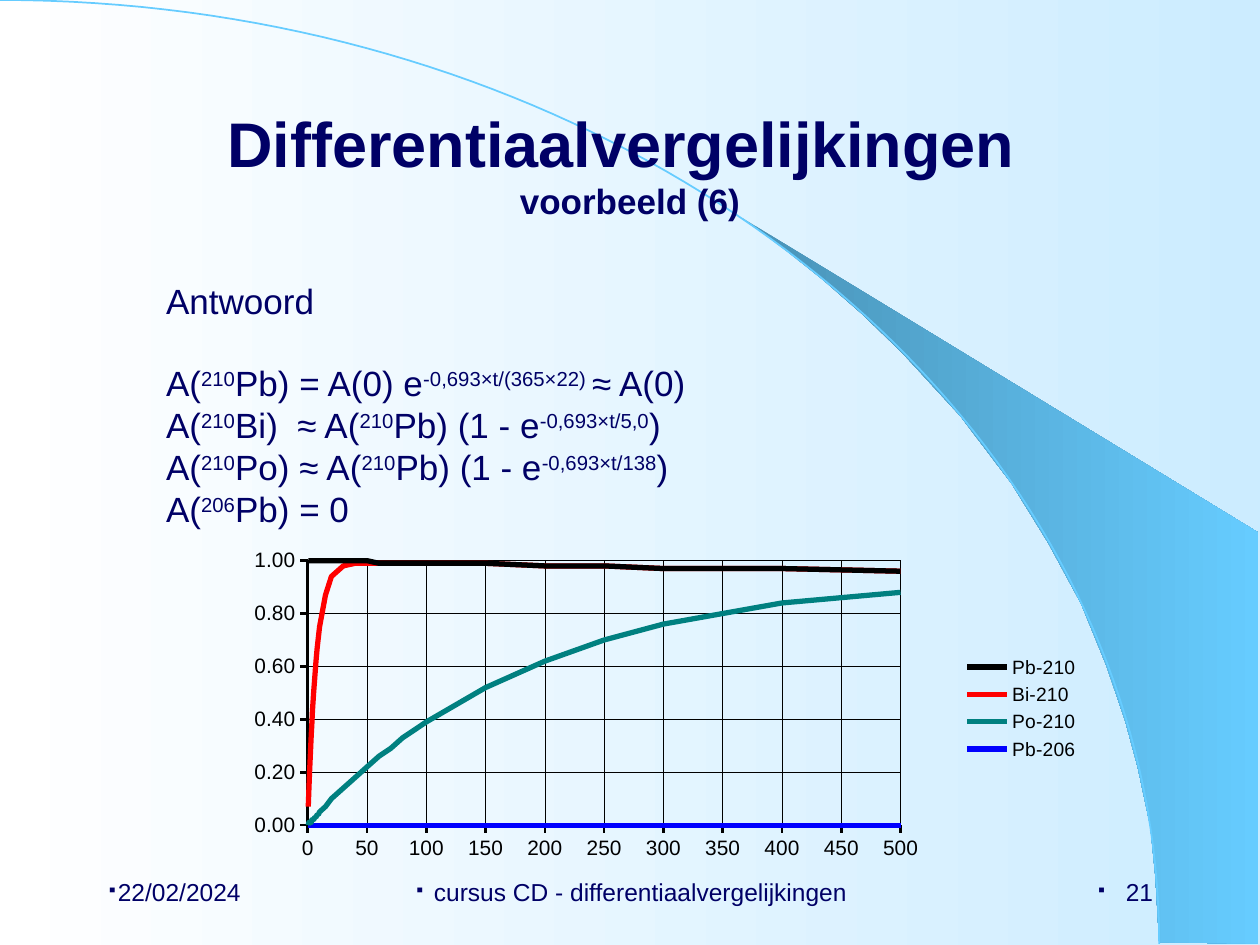
from math import exp

from lxml import etree
from pptx import Presentation
from pptx.chart.data import XyChartData
from pptx.dml.color import RGBColor
from pptx.enum.chart import XL_CHART_TYPE, XL_LEGEND_POSITION, XL_TICK_MARK
from pptx.enum.text import MSO_ANCHOR, PP_ALIGN
from pptx.oxml import parse_xml
from pptx.oxml.ns import nsdecls, qn
from pptx.util import Inches, Pt

SMOOTH = XL_CHART_TYPE.XY_SCATTER_SMOOTH_NO_MARKERS
LEGEND_RIGHT = XL_LEGEND_POSITION.RIGHT
TICK_OUT, TICK_NONE = XL_TICK_MARK.OUTSIDE, XL_TICK_MARK.NONE
MIDDLE = MSO_ANCHOR.MIDDLE
LEFT, CENTER, RIGHT = PP_ALIGN.LEFT, PP_ALIGN.CENTER, PP_ALIGN.RIGHT

FONT, NAVY, SKY, BLACK = "Arial", "000066", "66CCFF", "000000"
WEDGE = [
    (9.2, 7.48), (9.99, 7.49), (9.99, 4.23), (5.89, 1.73), (6.24, 1.99), (6.53, 2.22),
    (6.85, 2.5), (7.16, 2.8), (7.62, 3.3), (8.03, 3.84), (8.32, 4.31), (8.58, 4.79),
    (8.78, 5.28), (8.93, 5.72), (9.03, 6.09), (9.13, 6.56), (9.17, 6.96),
]
FORMULAS = [
    ["A(", "210", "Pb) = A(0) e", "-0,693×t/(365×22) ", "≈ A(0)"],
    ["A(", "210", "Bi)  ≈ A(", "210", "Pb) (1 - e", "-0,693×t/5,0", ")"],
    ["A(", "210", "Po) ≈ A(", "210", "Pb) (1 - e", "-0,693×t/138", ")"],
    ["A(", "206", "Pb) = 0"],
]
DAYS = [
    *(step / 2 for step in range(1, 8)), *range(4, 11), 15,
    *range(20, 101, 10), *range(150, 401, 50), 500,
]


def colour(code):
    """Turn a hex string into a colour."""
    return RGBColor.from_string(code)


def style_font(font, size, code, bold=False):
    """Give a font the deck's typeface with a size and colour."""
    font.name, font.size, font.bold = FONT, Pt(size), bold
    font.color.rgb = colour(code)


def style_line(line, code, width):
    """Set the colour and width of a line."""
    line.color.rgb = colour(code)
    line.width = Pt(width)


def fill_gradient(fill, start, end):
    """Fill with a left-to-right gradient."""
    fill.gradient()
    fill.gradient_angle = 0
    for stop, code in zip(fill.gradient_stops, (start, end)):
        stop.color.rgb = colour(code)


def add_outline(page, points, close):
    """Draw a freeform through points given in inches."""
    corners = [(Inches(x), Inches(y)) for x, y in points]
    builder = page.shapes.build_freeform(*corners[0])
    builder.add_line_segments(corners[1:], close=close)
    shape = builder.convert_to_shape()
    shape.shadow.inherit = False
    return shape


def add_backdrop(page, width, height):
    """Place the gradient, the wedge and the arc that ends at width, height."""
    fill_gradient(page.background.fill, "FFFFFF", "CCECFF")
    wedge = add_outline(page, WEDGE, True)
    fill_gradient(wedge.fill, "4992B6", SKY)
    wedge.line.fill.background()

    arc_points = []
    for step in range(81):
        t = step / 80
        s = 1 - t
        x = 3 * s * s * t * 5.08 + (3 * s * t * t + t ** 3) * width
        y = 3 * s * t * t * 3.35 + t ** 3 * height
        arc_points.append((x, y))
    arc = add_outline(page, arc_points, False)
    arc.fill.background()
    style_line(arc.line, SKY, 1)


def place_title(page, left, top, width, height):
    """Fill the title placeholder and bring it above the backdrop."""
    title = page.shapes.title
    page.shapes._spTree.append(title._element)
    title.left, title.top = Inches(left), Inches(top)
    title.width, title.height = Inches(width), Inches(height)
    frame = title.text_frame
    frame.vertical_anchor = MIDDLE
    para = frame.paragraphs[0]
    para.alignment = CENTER
    heading = para.add_run()
    heading.text = "Differentiaalvergelijkingen "
    para.add_line_break()
    subheading = para.add_run()
    subheading.text = "voorbeeld (6)"
    style_font(heading.font, 36, NAVY, True)
    style_font(subheading.font, 20, NAVY, True)


def add_answer(page, left, top, width, height):
    """Write the answer heading and its formulas with raised exponents."""
    box = page.shapes.add_textbox(Inches(left), Inches(top), Inches(width), Inches(height))
    frame = box.text_frame
    frame.word_wrap = True
    for number, pieces in enumerate([["Antwoord"], *FORMULAS]):
        para = frame.add_paragraph() if number else frame.paragraphs[0]
        style_font(para.font, 20, NAVY)
        para.space_after = Pt(0 if number else 23)
        para._p.get_or_add_pPr().set("marL", str(Inches(0.47)))
        for index, piece in enumerate(pieces):
            span = para.add_run()
            span.text = piece
            if index % 2:
                span.font._element.set("baseline", "30000")


def add_footer(page, text, alignment, left, top, width, height):
    """Write one footer field with a small square bullet."""
    box = page.shapes.add_textbox(Inches(left), Inches(top), Inches(width), Inches(height))
    frame = box.text_frame
    frame.word_wrap = True
    frame.vertical_anchor = MIDDLE
    para = frame.paragraphs[0]
    para.text = text
    para.alignment = alignment
    style_font(para.font, 14, NAVY)
    properties = para._p.get_or_add_pPr()
    bullet = etree.Element(qn("a:buChar"), char="▪")
    size = etree.Element(qn("a:buSzPct"), val="60000")
    properties.insert(0, size)
    properties.insert(1, bullet)


def decay_curves():
    """Return name, colour and activity function of each nuclide."""
    def lead(t):
        return exp(-0.693 * t / (365 * 22))

    return [
        ("Pb-210", BLACK, lead),
        ("Bi-210", "FF0000", lambda t: lead(t) * (1 - exp(-0.693 * t / 5))),
        ("Po-210", "008080", lambda t: lead(t) * (1 - exp(-0.693 * t / 138))),
        ("Pb-206", "0000FF", lambda t: 0),
    ]


def style_axis(axis, maximum, major, number_format):
    """Format one axis with its scale, grid and labels."""
    axis.minimum_scale, axis.maximum_scale, axis.major_unit = 0, maximum, major
    axis.major_tick_mark, axis.minor_tick_mark = TICK_OUT, TICK_NONE
    axis.has_major_gridlines = True
    style_line(axis.major_gridlines.format.line, BLACK, 0.37)
    style_line(axis.format.line, BLACK, 1.5)
    style_font(axis.tick_labels.font, 11.9, BLACK)
    axis.tick_labels.number_format = number_format
    axis.tick_labels.number_format_is_linked = False


def add_activity_chart(page, left, top, width, height):
    """Plot the activity of each nuclide against time in days."""
    curves = decay_curves()
    data = XyChartData()
    for name, _, activity in curves:
        series = data.add_series(name)
        for day in DAYS:
            series.add_data_point(day, round(activity(day), 2))
    chart = page.shapes.add_chart(
        SMOOTH, Inches(left), Inches(top), Inches(width), Inches(height), data
    ).chart
    chart.has_title = False
    style_font(chart.font, 11.9, BLACK)
    style_axis(chart.category_axis, 500, 50, "0")
    style_axis(chart.value_axis, 1, 0.2, "0.00")
    chart.has_legend = True
    chart.legend.position = LEGEND_RIGHT
    chart.legend.include_in_layout = False
    style_font(chart.legend.font, 11, BLACK)
    chart.plots[0].vary_by_categories = False
    for series, (_, code, _) in zip(chart.plots[0].series, curves):
        series.smooth = True
        style_line(series.format.line, code, 3)

    places = "".join(f'<c:{key} val="{value}"/>' for key, value in (
        ("layoutTarget", "inner"), ("xMode", "edge"), ("yMode", "edge"),
        ("x", 0.1), ("y", 0.11), ("w", 0.68), ("h", 0.7)))
    layout = parse_xml(
        f'<c:layout {nsdecls("c")}><c:manualLayout>{places}</c:manualLayout></c:layout>')
    area = chart._chartSpace.chart.plotArea
    for previous in area.findall(qn("c:layout")):
        area.remove(previous)
    area.insert(0, layout)


def main():
    """Build the slide and save the deck."""
    deck = Presentation()
    deck.slide_width, deck.slide_height = Inches(10), Inches(7.5)
    page = deck.slides.add_slide(deck.slide_layouts[5])
    add_backdrop(page, 9.2, 7.49)
    place_title(page, 0.75, 0.67, 8.5, 1.25)
    add_answer(page, 0.75, 2.17, 8.66, 4.5)
    add_activity_chart(page, 1.75, 4.12, 6.92, 3)
    add_footer(page, "22/02/2024", LEFT, 0.75, 6.83, 2.08, 0.5)
    add_footer(page, "cursus CD - differentiaalvergelijkingen", CENTER, 3.19, 6.83, 3.7, 0.5)
    add_footer(page, "21", RIGHT, 7.17, 6.83, 2.08, 0.5)
    deck.save("out.pptx")


if __name__ == "__main__":
    main()
